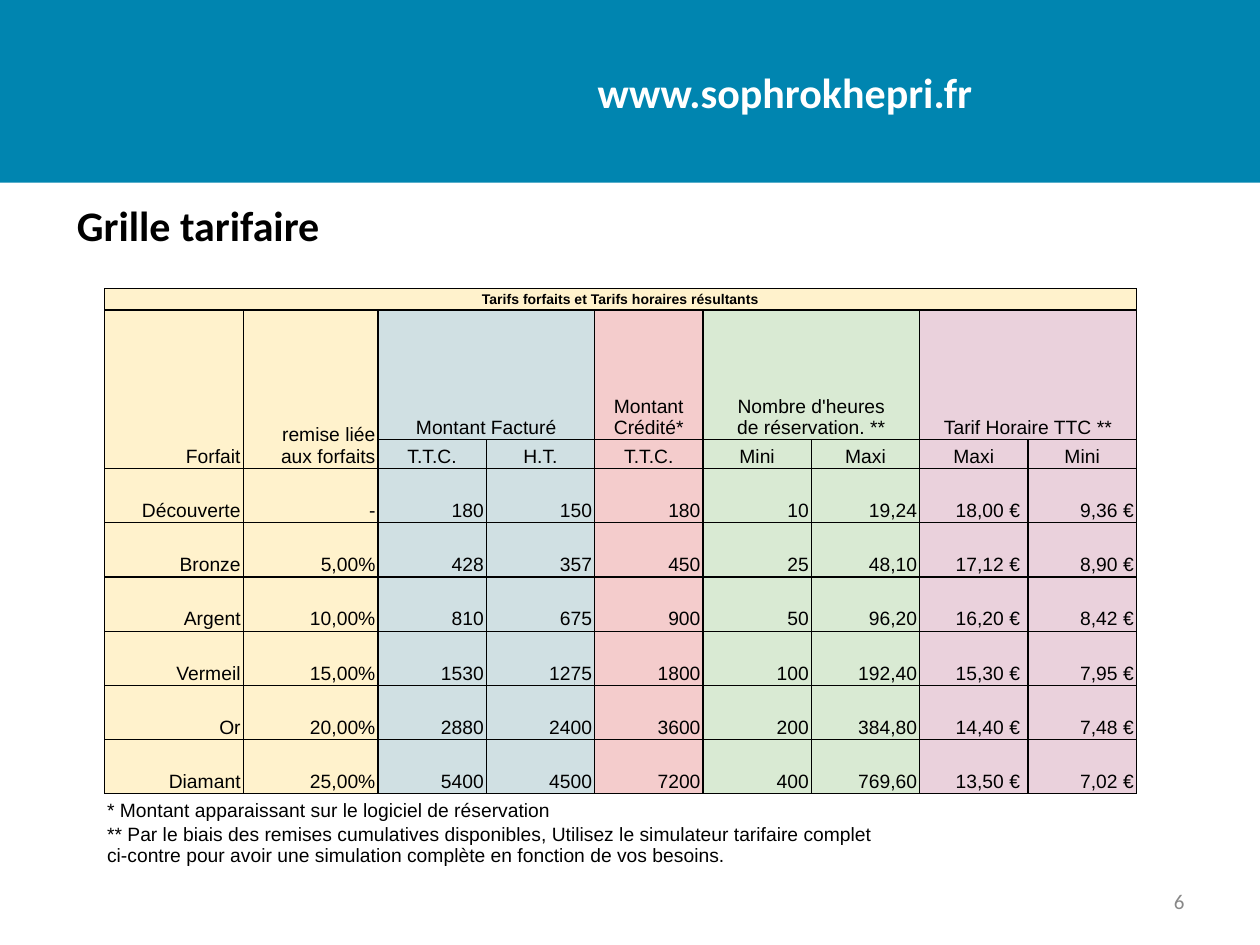
from dataclasses import dataclass

from lxml.etree import SubElement
from pptx import Presentation
from pptx.dml.color import RGBColor
from pptx.enum.shapes import MSO_SHAPE
from pptx.enum.text import MSO_ANCHOR, PP_ALIGN
from pptx.oxml.ns import qn
from pptx.util import Inches, Pt

CREAM, BLUE, RED, GREEN, PINK = "FFF2CC", "D0E0E3", "F4CCCC", "D9EAD3", "EAD1DC"
COLUMN_FILLS = [CREAM, CREAM, BLUE, BLUE, RED, GREEN, GREEN, PINK, PINK]
COLUMN_WIDTHS = [1.1, 1.07] + [0.86] * 7
ROW_HEIGHTS = [0.17, 1.03, 0.23] + [0.43] * 6 + [0.23, 0.83]
FIRST_PLAN_ROW = 3
FIRST_NOTE_ROW = 9

PLANS = [
    ["Découverte", "-", "180", "150", "180", "10", "19,24", "18,00 € ", "9,36 €"],
    ["Bronze", "5,00%", "428", "357", "450", "25", "48,10", "17,12 € ", "8,90 €"],
    ["Argent", "10,00%", "810", "675", "900", "50", "96,20", "16,20 € ", "8,42 €"],
    ["Vermeil", "15,00%", "1530", "1275", "1800", "100", "192,40", "15,30 € ", "7,95 €"],
    ["Or", "20,00%", "2880", "2400", "3600", "200", "384,80", "14,40 € ", "7,48 €"],
    ["Diamant", "25,00%", "5400", "4500", "7200", "400", "769,60", "13,50 € ", "7,02 €"],
]


@dataclass
class Entry:
    row: int
    column: int
    text: str
    align: PP_ALIGN = PP_ALIGN.CENTER
    rows: int = 1
    columns: int = 1
    anchor: MSO_ANCHOR = MSO_ANCHOR.BOTTOM
    size: float = 11
    bold: bool = False


HEADINGS = [
    Entry(0, 0, "Tarifs forfaits et Tarifs horaires résultants", columns=9,
          anchor=MSO_ANCHOR.MIDDLE, size=8, bold=True),
    Entry(1, 0, "Forfait", PP_ALIGN.RIGHT, rows=2),
    Entry(1, 1, "remise liée\naux forfaits", PP_ALIGN.RIGHT, rows=2),
    Entry(1, 2, "Montant Facturé", columns=2),
    Entry(1, 4, "Montant\nCrédité*"),
    Entry(1, 5, "Nombre d'heures\nde réservation. **", columns=2),
    Entry(1, 7, "Tarif Horaire TTC **", columns=2),
]
UNITS = [
    Entry(2, column, unit)
    for column, unit in enumerate(
        ["T.T.C.", "H.T.", "T.T.C.", "Mini", "Maxi", "Maxi", "Mini"], start=2)
]
PRICES = [
    Entry(row, column, value, PP_ALIGN.RIGHT)
    for row, plan in enumerate(PLANS, start=FIRST_PLAN_ROW)
    for column, value in enumerate(plan)
]
NOTES = [
    Entry(9, 0, "* Montant apparaissant sur le logiciel de réservation",
          PP_ALIGN.LEFT, columns=9),
    Entry(10, 0, "** Par le biais des remises cumulatives disponibles, Utilisez le "
          "simulateur tarifaire complet\nci-contre pour avoir une simulation complète "
          "en fonction de vos besoins.", PP_ALIGN.LEFT, columns=9, anchor=MSO_ANCHOR.TOP),
]


def rgb(color: str) -> RGBColor:
    return RGBColor.from_string(color)


def write(paragraph, text: str, size: float, color: str, align: PP_ALIGN,
          font: str = "Calibri", bold: bool = False) -> None:
    paragraph.text = text
    paragraph.alignment = align
    paragraph.font.name = font
    paragraph.font.size = Pt(size)
    paragraph.font.bold = bold
    paragraph.font.color.rgb = rgb(color)


def add_label(slide, left: float, top: float, width: float, height: float):
    label = slide.shapes.add_textbox(
        Inches(left), Inches(top), Inches(width), Inches(height))
    label.text_frame.word_wrap = True
    return label.text_frame


def set_borders(cell, visible_sides: str) -> None:
    properties = cell._tc.get_or_add_tcPr()
    for side in "LRTB":
        line = SubElement(properties, qn(f"a:ln{side}"), w=str(Pt(0.75)))
        if side in visible_sides:
            fill = SubElement(line, qn("a:solidFill"))
            SubElement(fill, qn("a:srgbClr"), val="000000")
        else:
            SubElement(line, qn("a:noFill"))


def format_cell(cell, row: int, column: int) -> None:
    cell.margin_left = cell.margin_right = Inches(0.02)
    cell.margin_top = cell.margin_bottom = Inches(0.01)
    if row < FIRST_NOTE_ROW:
        set_borders(cell, "LRTB")
        cell.fill.solid()
        cell.fill.fore_color.rgb = rgb(CREAM if row == 0 else COLUMN_FILLS[column])
    else:
        set_borders(cell, "T" if row == FIRST_NOTE_ROW else "")
        cell.fill.background()


def fill_entry(table, entry: Entry) -> None:
    cell = table.cell(entry.row, entry.column)
    if entry.rows > 1 or entry.columns > 1:
        cell.merge(table.cell(entry.row + entry.rows - 1,
                              entry.column + entry.columns - 1))
    cell.vertical_anchor = entry.anchor
    write(cell.text_frame.paragraphs[0], entry.text, entry.size, "000000",
          entry.align, "Arial", entry.bold)


def add_price_table(slide) -> None:
    table = slide.shapes.add_table(
        len(ROW_HEIGHTS), len(COLUMN_WIDTHS), Inches(0.83), Inches(2.29),
        Inches(sum(COLUMN_WIDTHS)), Inches(sum(ROW_HEIGHTS))).table
    table.first_row = table.horz_banding = False
    for column, width in zip(table.columns, COLUMN_WIDTHS):
        column.width = Inches(width)
    for row, height in zip(table.rows, ROW_HEIGHTS):
        row.height = Inches(height)
    for row in range(len(ROW_HEIGHTS)):
        for column in range(len(COLUMN_WIDTHS)):
            format_cell(table.cell(row, column), row, column)
    for entry in HEADINGS + UNITS + PRICES + NOTES:
        fill_entry(table, entry)


def add_banner(slide) -> None:
    banner = slide.shapes.add_shape(
        MSO_SHAPE.RECTANGLE, 0, 0, Inches(10), Inches(1.45))
    banner.shadow.inherit = False
    banner.fill.solid()
    banner.fill.fore_color.rgb = rgb("0085B0")
    banner.line.fill.background()
    address = add_label(slide, 2.92, 0.28, 6.62, 0.71).paragraphs[0]
    write(address, "www.sophrokhepri.fr", 24, "FFFFFF", PP_ALIGN.CENTER, bold=True)
    address.line_spacing = 1.5


def place_title(slide) -> None:
    title = slide.shapes.title
    title.left, title.top = Inches(0.51), Inches(1.47)
    title.width, title.height = Inches(9.06), Inches(0.63)
    frame = title.text_frame
    frame.vertical_anchor = MSO_ANCHOR.MIDDLE
    frame.margin_top = frame.margin_bottom = Inches(0.1)
    write(frame.paragraphs[0], "Grille tarifaire", 24, "000000", PP_ALIGN.LEFT, bold=True)


def add_page_number(slide) -> None:
    frame = add_label(slide, 7.17, 6.95, 2.33, 0.4)
    frame.vertical_anchor = MSO_ANCHOR.MIDDLE
    write(frame.paragraphs[0], "6", 12, "888888", PP_ALIGN.RIGHT)


def main() -> None:
    presentation = Presentation()
    presentation.slide_width, presentation.slide_height = Inches(10), Inches(7.5)
    slide = presentation.slides.add_slide(presentation.slide_layouts[0])
    subtitle = slide.placeholders[1].element
    subtitle.getparent().remove(subtitle)
    add_banner(slide)
    place_title(slide)
    add_page_number(slide)
    add_price_table(slide)
    presentation.save("out.pptx")


if __name__ == "__main__":
    main()
